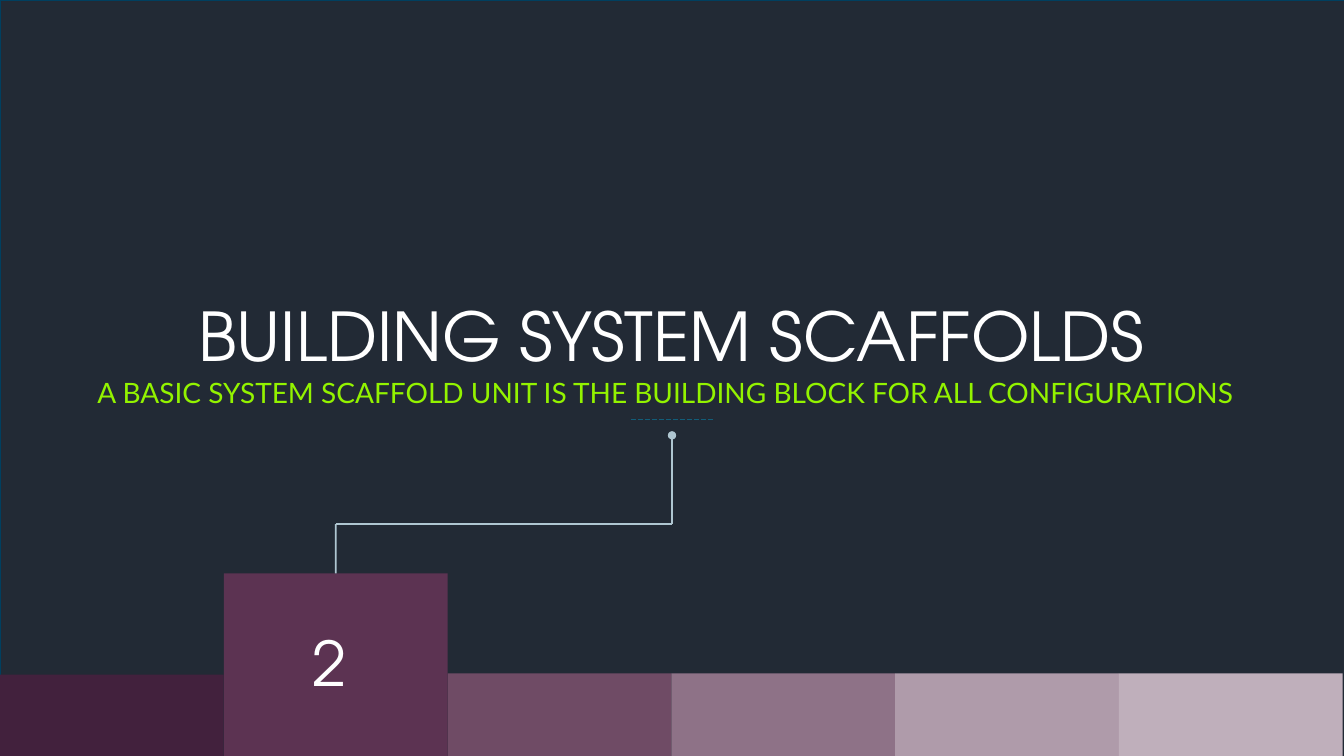
from pptx import Presentation
from pptx.dml.color import RGBColor
from pptx.enum import dml, shapes, text
from pptx.oxml import parse_xml
from pptx.oxml.ns import nsdecls, qn
from pptx.util import Cm, Pt

COLORS = {
    "night": "222A35",
    "border": "003F5F",
    "tile": "5C3352",
    "connector": "AFC6D1",
    "dash": "125D79",
    "white": "FFFFFF",
    "lime": "93F300",
}
BAND = {0: "42213D", 2: "6F4B65", 3: "8E7287", 4: "AF9BAA", 5: "BFAFBB"}
HEADING_FONT = "TeX Gyre Adventor"
SLIDE_WIDTH, SLIDE_HEIGHT = 33.87, 19.05
STEP = 5.64
BAND_TOP = 16.97
TILE_TOP = 14.45
TILE_MIDDLE = STEP * 1.5
ELBOW = 13.21
CENTER = SLIDE_WIDTH / 2


def rgb(value):
    return RGBColor.from_string(value)


def add_rectangle(slide, left, top, width, height, fill, border=None):
    shape = slide.shapes.add_shape(
        shapes.MSO_SHAPE.RECTANGLE, Cm(left), Cm(top), Cm(width), Cm(height))
    shape.shadow.inherit = False
    shape.fill.solid()
    shape.fill.fore_color.rgb = rgb(fill)
    if border:
        shape.line.color.rgb = rgb(border)
        shape.line.width = Pt(0.5)
    else:
        shape.line.fill.background()
    return shape


def add_line(slide, start, end, color, dash=None, oval=False):
    """Draw a straight connector, with an oval at its start if asked."""
    points = [Cm(value) for value in (*start, *end)]
    line = slide.shapes.add_connector(shapes.MSO_CONNECTOR.STRAIGHT, *points)
    line.line.color.rgb = rgb(color)
    line.line.width = Pt(1.25)
    if dash:
        line.line.dash_style = dash
    properties = line.element.spPr
    if oval:
        properties.find(qn("a:ln")).append(
            parse_xml(f'<a:headEnd {nsdecls("a")} type="oval"/>'))
    properties.append(parse_xml(f'<a:effectLst {nsdecls("a")}/>'))
    return line


def write(shape, content, size, font=HEADING_FONT, color=COLORS["white"],
          align=text.PP_ALIGN.CENTER, wrap=True):
    frame = shape.text_frame
    frame.word_wrap = wrap
    frame.auto_size = text.MSO_AUTO_SIZE.SHAPE_TO_FIT_TEXT
    frame.vertical_anchor = text.MSO_ANCHOR.TOP
    paragraph = frame.paragraphs[0]
    paragraph.alignment = align
    run = paragraph.add_run()
    run.text = content
    run.font.size = Pt(size)
    run.font.name = font
    run.font.color.rgb = rgb(color)


def add_title(slide, content):
    title = slide.shapes.title
    title.left, title.top = Cm(4.6), Cm(7.29)
    title.width, title.height = Cm(24.64), Cm(2.31)
    write(title, content, size=48, wrap=False)


def add_backdrop(slide):
    """Fill the slide with a rectangle that lies behind the title."""
    backdrop = add_rectangle(slide, 0, 0, SLIDE_WIDTH, SLIDE_HEIGHT,
                             COLORS["night"], COLORS["border"])
    slide.shapes.title.element.addprevious(backdrop.element)


def add_band(slide):
    for column, color in BAND.items():
        top = BAND_TOP if column else BAND_TOP + 0.03
        add_rectangle(slide, column * STEP, top, STEP, SLIDE_HEIGHT - top, color)


def add_number_tile(slide, number):
    tile = add_rectangle(slide, STEP, TILE_TOP, STEP, SLIDE_HEIGHT - TILE_TOP,
                         COLORS["tile"])
    label = add_rectangle(slide, 7.62, 15.62, 1.55, 2.13, COLORS["tile"])
    write(label, number, size=44, align=text.PP_ALIGN.LEFT)
    return tile


def add_route(slide, tile):
    """Lead from below the subtitle down to the numbered tile."""
    color = COLORS["connector"]
    add_line(slide, (CENTER, 10.97), (CENTER, ELBOW), color, oval=True)
    add_line(slide, (TILE_MIDDLE, ELBOW), (CENTER, ELBOW), color)
    drop = add_line(slide, (TILE_MIDDLE, ELBOW), (TILE_MIDDLE, TILE_TOP), color)
    drop.end_connect(tile, 0)


def main():
    presentation = Presentation()
    presentation.slide_width = Cm(SLIDE_WIDTH)
    presentation.slide_height = Cm(SLIDE_HEIGHT)
    slide = presentation.slides.add_slide(presentation.slide_layouts[5])

    add_backdrop(slide)
    add_title(slide, "BUILDING SYSTEM SCAFFOLDS")
    subtitle = slide.shapes.add_textbox(Cm(1.27), Cm(9.35), Cm(31.01), Cm(1.12))
    write(subtitle,
          "A BASIC SYSTEM SCAFFOLD UNIT IS THE BUILDING BLOCK FOR ALL CONFIGURATIONS",
          size=20, font="Lato", color=COLORS["lime"])
    add_line(slide, (15.9, 10.57), (17.96, 10.57), COLORS["dash"],
             dash=dml.MSO_LINE.SQUARE_DOT)
    add_band(slide)
    tile = add_number_tile(slide, "2")
    add_route(slide, tile)

    presentation.save("out.pptx")


if __name__ == "__main__":
    main()
